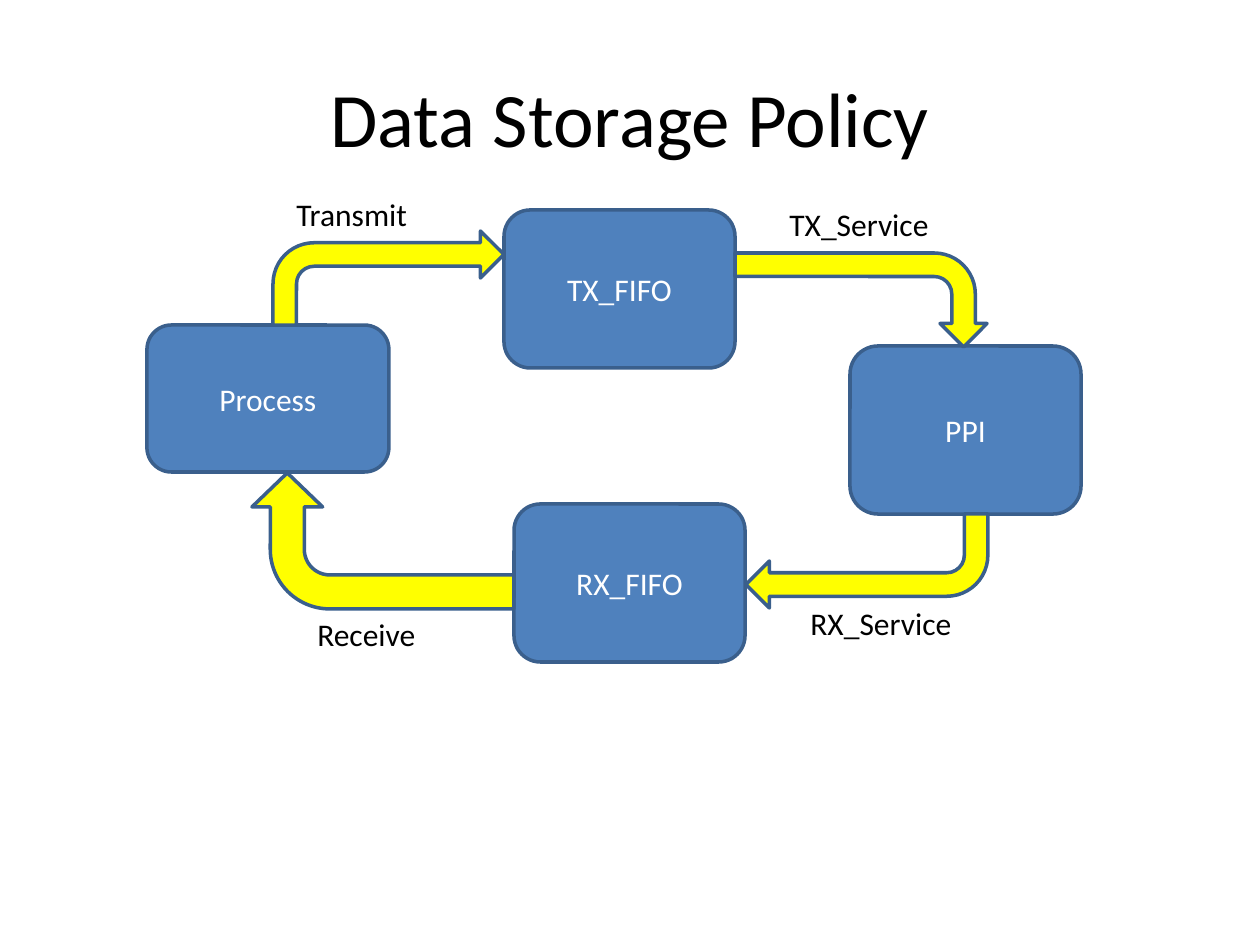
from dataclasses import dataclass

from pptx import Presentation
from pptx.dml.color import RGBColor
from pptx.enum.shapes import MSO_SHAPE
from pptx.enum.text import MSO_ANCHOR, MSO_AUTO_SIZE, PP_ALIGN
from pptx.util import Emu, Pt

ROUNDED = MSO_SHAPE.ROUNDED_RECTANGLE
BENT_ARROW = MSO_SHAPE.BENT_ARROW
MIDDLE, TOP = MSO_ANCHOR.MIDDLE, MSO_ANCHOR.TOP
CENTER, LEFT = PP_ALIGN.CENTER, PP_ALIGN.LEFT
PX = 914400 / 126


@dataclass(frozen=True)
class Theme:
    font: str = "Calibri"
    title_size: int = 44
    body_size: int = 18
    line_width: int = 2
    text: str = "000000"
    box_text: str = "FFFFFF"
    box: str = "4F81BD"
    arrow: str = "FFFF00"
    outline: str = "3A5F8C"


THEME = Theme()

TITLE = ("Data Storage Policy", (63, 38, 1134, 158))

# Name, (left, top, width, height) in px
STAGES = [
    ("Process", (147, 325, 242, 147)),
    ("TX_FIFO", (504, 210, 231, 158)),
    ("PPI", (850, 346, 231, 168)),
    ("RX_FIFO", (514, 504, 231, 158)),
]

# Area before rotation, rotation, flipped both ways, arrowhead half-width ratio
FLOWS = [
    ((273, 231, 231, 94), 0, False, 0.25),
    ((315, 410, 136, 262), 90, True, 0.26),
    ((814, 174, 94, 252), 90, False, 0.25),
    ((746, 514, 242, 94), 0, True, 0.25),
]

LABELS = [
    ("TX_Service", (777, 199, 166, 50)),
    ("RX_Service", (798, 598, 168, 50)),
    ("Transmit", (284, 189, 137, 50)),
    ("Receive", (305, 609, 125, 50)),
]


def px(length):
    return Emu(round(length * PX))


def emu_area(area):
    return [px(length) for length in area]


def write(shape, text, size, color, align, anchor, wrap=True):
    frame = shape.text_frame
    frame.word_wrap = wrap
    frame.vertical_anchor = anchor
    paragraph = frame.paragraphs[0]
    paragraph.text = text
    paragraph.alignment = align
    paragraph.font.name = THEME.font
    paragraph.font.size = Pt(size)
    paragraph.font.color.rgb = RGBColor.from_string(color)


def add_outlined(slide, kind, area, fill):
    shape = slide.shapes.add_shape(kind, *emu_area(area))
    shape.shadow.inherit = False
    shape.fill.solid()
    shape.fill.fore_color.rgb = RGBColor.from_string(fill)
    shape.line.color.rgb = RGBColor.from_string(THEME.outline)
    shape.line.width = Pt(THEME.line_width)
    return shape


def add_flow(slide, area, rotation, flipped, head):
    arrow = add_outlined(slide, BENT_ARROW, area, THEME.arrow)
    arrow.rotation = rotation
    arrow.adjustments[1] = head
    if flipped:
        xfrm = arrow._element.spPr.get_or_add_xfrm()
        xfrm.set("flipH", "1")
        xfrm.set("flipV", "1")


def main():
    deck = Presentation()
    deck.slide_width, deck.slide_height = px(1260), px(945)
    slide = deck.slides.add_slide(deck.slide_layouts[6])

    title, area = TITLE
    heading = slide.shapes.add_textbox(*emu_area(area))
    write(heading, title, THEME.title_size, THEME.text, CENTER, MIDDLE)

    for stage, area in STAGES:
        box = add_outlined(slide, ROUNDED, area, THEME.box)
        write(box, stage, THEME.body_size, THEME.box_text, CENTER, MIDDLE)

    for flow in FLOWS:
        add_flow(slide, *flow)

    for label, area in LABELS:
        caption = slide.shapes.add_textbox(*emu_area(area))
        write(caption, label, THEME.body_size, THEME.text, LEFT, TOP, wrap=False)
        caption.text_frame.auto_size = MSO_AUTO_SIZE.SHAPE_TO_FIT_TEXT

    deck.save("out.pptx")


if __name__ == "__main__":
    main()
